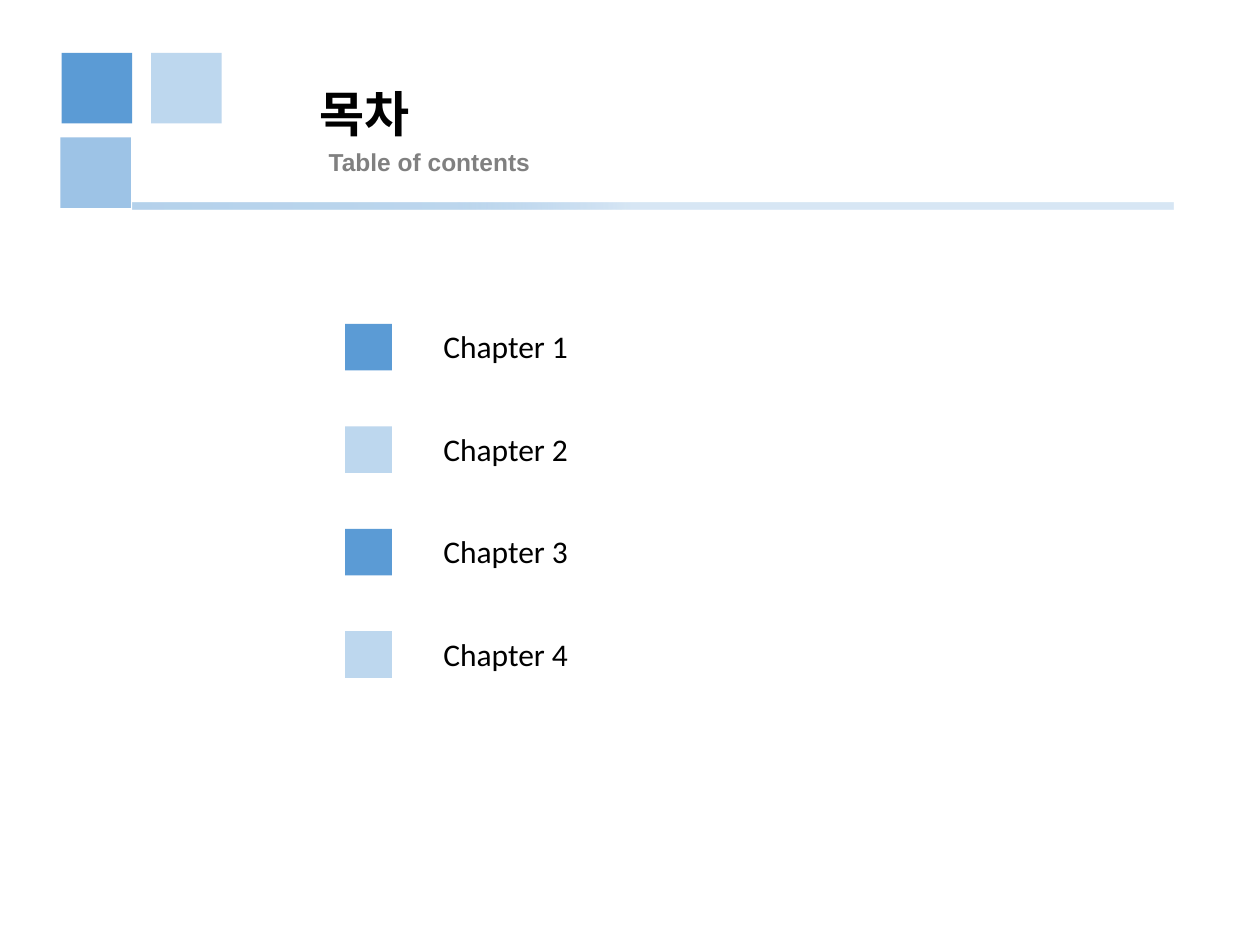
"""Build a table of contents slide with a square motif and four chapters."""
from typing import NamedTuple

from lxml import etree
from pptx import Presentation
from pptx import util as u
from pptx.dml.color import RGBColor
from pptx.enum import shapes, text
from pptx.oxml import ns

BLUE, MID, PALE = "5B9BD5", "9DC3E6", "BDD7EE"


class Box(NamedTuple):
    left: float
    top: float
    width: float
    height: float

    def size(self) -> list:
        return [u.Inches(side) for side in self]


class Label(NamedTuple):
    words: str
    box: Box
    points: int
    font: str = "Calibri"
    color: str = "000000"
    bold: bool = False


class Stop(NamedTuple):
    place: int
    color: str
    alpha: int = 100


def paint(target, color: str) -> None:
    """Give a fill one solid colour."""
    target.solid()
    target.fore_color.rgb = RGBColor.from_string(color)


def add_block(slide, box: Box, color: str):
    """Add a plain rectangle without outline."""
    block = slide.shapes.add_shape(shapes.MSO_SHAPE.RECTANGLE, *box.size())
    block.shadow.inherit = False
    paint(block.fill, color)
    block.line.fill.background()
    return block


def add_label(slide, label: Label) -> None:
    """Add one line of text."""
    frame = slide.shapes.add_textbox(*label.box.size()).text_frame
    frame.word_wrap = False
    frame.auto_size = text.MSO_AUTO_SIZE.SHAPE_TO_FIT_TEXT
    frame.text = label.words
    font = frame.paragraphs[0].runs[0].font
    font.name, font.size, font.bold = label.font, u.Pt(label.points), label.bold
    paint(font.fill, label.color)


def add_rule(slide, box: Box, stops: list[Stop]) -> None:
    """Add the fading bar below the heading."""
    bar = add_block(slide, box, PALE)
    bar.rotation = 180
    bar.fill.gradient()
    bar.fill.gradient_angle = 180
    holder = bar.element.spPr.find(".//" + ns.qn("a:gsLst"))
    for old in list(holder):
        holder.remove(old)
    for stop in stops:
        point = etree.SubElement(holder, ns.qn("a:gs"), pos=str(stop.place * 1000))
        color = etree.SubElement(point, ns.qn("a:srgbClr"), val=stop.color)
        if stop.alpha < 100:
            etree.SubElement(color, ns.qn("a:alpha"), val=str(stop.alpha * 1000))


def main() -> None:
    """Draw the heading and the chapter list, then save."""
    deck = Presentation()
    deck.slide_width, deck.slide_height = u.Inches(10), u.Inches(7.5)
    slide = deck.slides.add_slide(deck.slide_layouts[6])

    add_label(slide, Label("목차", Box(2.44, 0.61, 0.99, 0.57), 28, bold=True))
    add_label(slide, Label("Table of contents", Box(2.51, 1.12, 1.82, 0.34),
                           14, "Arial", "808080", True))

    for left, top, color in [(1.2, 0.42, PALE), (0.49, 0.42, BLUE), (0.48, 1.09, MID)]:
        add_block(slide, Box(left, top, 0.56, 0.56), color)
    add_rule(slide, Box(1.05, 1.61, 8.26, 0.05),
             [Stop(0, "B5D2EC"), Stop(31, PALE), Stop(48, MID, 40), Stop(66, MID, 40)])

    first, last, count = 2.57, 5.01, 4
    for row in range(count):
        top = first + row * (last - first) / (count - 1)
        add_block(slide, Box(2.74, top, 0.37, 0.37), (BLUE, PALE)[row % 2])
        add_label(slide, Label(f"Chapter {row + 1}", Box(3.42, top - 0.02, 1.2, 0.4), 18))

    deck.save("out.pptx")


if __name__ == "__main__":
    main()
